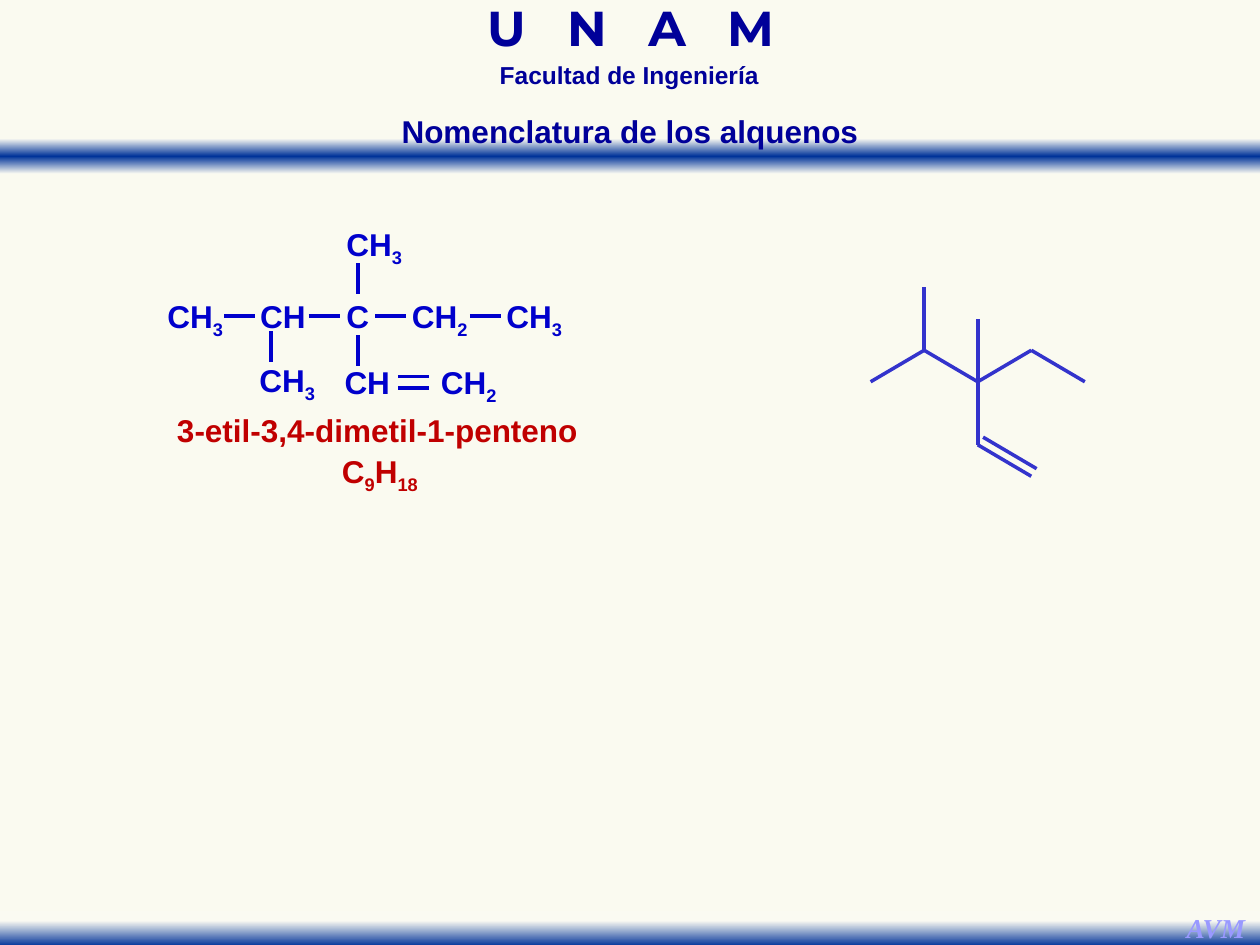
from copy import deepcopy
from dataclasses import dataclass
from itertools import groupby

from lxml import etree
from pptx import Presentation
from pptx.dml.color import RGBColor
from pptx.enum.shapes import MSO_CONNECTOR, MSO_SHAPE
from pptx.enum.text import MSO_ANCHOR, PP_ALIGN
from pptx.oxml.ns import qn
from pptx.util import Inches, Pt

CENTER = PP_ALIGN.CENTER
MIDDLE = MSO_ANCHOR.MIDDLE
RECT = MSO_SHAPE.RECTANGLE
STRAIGHT = MSO_CONNECTOR.STRAIGHT

CREAM = RGBColor(0xFA, 0xFA, 0xF0)
PALE = RGBColor(0xFA, 0xFA, 0xF2)
BAND = RGBColor(0x00, 0x33, 0x99)
NAVY = RGBColor(0x00, 0x00, 0x99)
BLUE = RGBColor(0x00, 0x00, 0xCC)
INK = RGBColor(0x33, 0x33, 0xCC)
RED = RGBColor(0xC0, 0x00, 0x00)
LILAC = RGBColor(0x99, 0x99, 0xFF)

# The slide is a grid of square cells
COLS, ROWS = 100, 75
CELL = Inches(0.1)


@dataclass
class Label:
    text: str
    col: float
    row: float
    wide: float
    high: float = 4
    color: RGBColor = BLUE
    size: float = 18
    face: str = "Arial"
    slant: bool = False
    tight: bool = False
    wrap: bool = False
    chem: bool = False  # digits become subscripts


@dataclass
class Bond:
    col: float
    row: float
    to_col: float
    to_row: float


def cells(*counts: float) -> list[int]:
    return [round(count * CELL) for count in counts]


def fill_text(box, label: Label) -> None:
    frame = box.text_frame
    frame.word_wrap = label.wrap
    para = frame.paragraphs[0]
    para.alignment = CENTER
    if label.tight:
        para.line_spacing = 0.7
    font = para.font
    font.name, font.size, font.bold = label.face, Pt(label.size), True
    font.italic = label.slant
    font.color.rgb = label.color
    for low, part in groupby(label.text, lambda c: label.chem and c.isdigit()):
        run = para.add_run()
        run.text = "".join(part)
        if low:
            run._r.get_or_add_rPr().set("baseline", "-25000")


def draw_label(shapes, label: Label) -> None:
    box = shapes.add_textbox(*cells(label.col, label.row, label.wide, label.high))
    fill_text(box, label)


def draw_bond(shapes, bond: Bond, color: RGBColor) -> None:
    line = shapes.add_connector(
        STRAIGHT, *cells(bond.col, bond.row, bond.to_col, bond.to_row))
    line.line.color.rgb = color
    line.line.width = Pt(2)
    etree.SubElement(line._element.spPr, qn("a:effectLst"))


def draw_band(shapes, row: float, stops: list[tuple[float, RGBColor]]) -> None:
    band = shapes.add_shape(RECT, *cells(0, row, COLS, 2.8))
    band.shadow.inherit = False
    band.line.fill.background()
    band.fill.gradient()
    band.fill.gradient_angle = 270
    items = band._element.spPr.find(".//" + qn("a:gsLst"))
    while len(items) < len(stops):
        items.append(deepcopy(items[0]))
    for stop, (place, color) in zip(band.fill.gradient_stops, stops):
        stop.position = place
        stop.color.rgb = color


# Page frame
HEADS = [
    Label("U   N   A   M", 30.5, 0.6, 39.1, 4.3, NAVY, 28, "Montserrat",
          tight=True, wrap=True),
    Label("Facultad de Ingeniería", 32.1, 4.9, 35.7, 2.7, NAVY, 14,
          tight=True, wrap=True),
    Label("AVM", 93.1, 71.8, 6.8, 3.7, LILAC, 15.6, "Times New Roman", slant=True),
]
TITLE = Label("Nomenclatura de los alquenos", 30.7, 8.4, 38.6, color=NAVY)
NAMES = [
    Label("3-etil-3,4-dimetil-1-penteno", 11.9, 32.1, 36.1, color=RED, wrap=True),
    Label("C9H18", 25.9, 35.4, 8.5, color=RED, chem=True),
]

# Written formula: atoms by row, then bonds of equal length
TOP, MID, LOW = 17.4, 23.1, 28.3
WIDTHS = {"C": 3.8, "CH": 5.7, "CH2": 6.6, "CH3": 6.6}
ATOMS = [
    ("CH3", 26.4, TOP),
    ("CH3", 12.2, MID), ("CH", 19.6, MID), ("C", 26.5, MID),
    ("CH2", 31.6, MID), ("CH3", 39.1, MID),
    ("CH3", 19.5, LOW - 0.1), ("CH", 26.3, LOW), ("CH2", 33.9, LOW),
]
LONG = 2.45
ACROSS = [(17.8, 25.1), (24.5, 25.1), (29.8, 25.1), (37.3, 25.1),
          (31.6, 29.9), (31.6, 30.8)]
DOWN = [(28.4, 20.9), (28.4, 26.6), (21.5, 26.3)]

# Zigzag drawing: nodes on a lattice of its own
LEFT, HEAD, STEP, RISE = 69.1, 22.8, 4.25, 2.5
ZIGZAG = [
    ((0, 3), (1, 2)), ((1, 2), (2, 3)), ((2, 3), (3, 2)), ((3, 2), (4, 3)),
    ((1, 2), (1, 0)), ((2, 3), (2, 1)), ((2, 3), (2, 5)),
    ((2, 5), (3, 6)), ((2.1, 4.76), (3.1, 5.76)),
]


def node(spot: tuple[float, float]) -> tuple[float, float]:
    return LEFT + spot[0] * STEP, HEAD + spot[1] * RISE


def main() -> None:
    deck = Presentation()
    deck.slide_width, deck.slide_height = cells(COLS, ROWS)
    slide = deck.slides.add_slide(deck.slide_layouts[5])
    slide.background.fill.solid()
    slide.background.fill.fore_color.rgb = CREAM
    shapes = slide.shapes

    # Bands and headings
    draw_band(shapes, 11, [(0, PALE), (0.5, BAND), (1, PALE)])
    draw_band(shapes, 72.3, [(0.28, PALE), (1, BAND)])
    for label in HEADS + NAMES:
        draw_label(shapes, label)

    # Written formula
    group = shapes.add_group_shape().shapes
    for text, col, row in ATOMS:
        draw_label(group, Label(text, col, row, WIDTHS[text], chem=True))
    for col, row in ACROSS:
        draw_bond(group, Bond(col, row, col + LONG, row), BLUE)
    for col, row in DOWN:
        draw_bond(group, Bond(col, row, col, row + LONG), BLUE)

    # Zigzag drawing
    group = shapes.add_group_shape().shapes
    for start, end in ZIGZAG:
        draw_bond(group, Bond(*node(start), *node(end)), INK)

    # Title, in front of the band
    title = shapes.title
    title.left, title.top, title.width, title.height = cells(
        TITLE.col, TITLE.row, TITLE.wide, TITLE.high)
    title.text_frame.vertical_anchor = MIDDLE
    fill_text(title, TITLE)
    shapes._spTree.append(title._element)

    deck.save("out.pptx")


if __name__ == "__main__":
    main()
